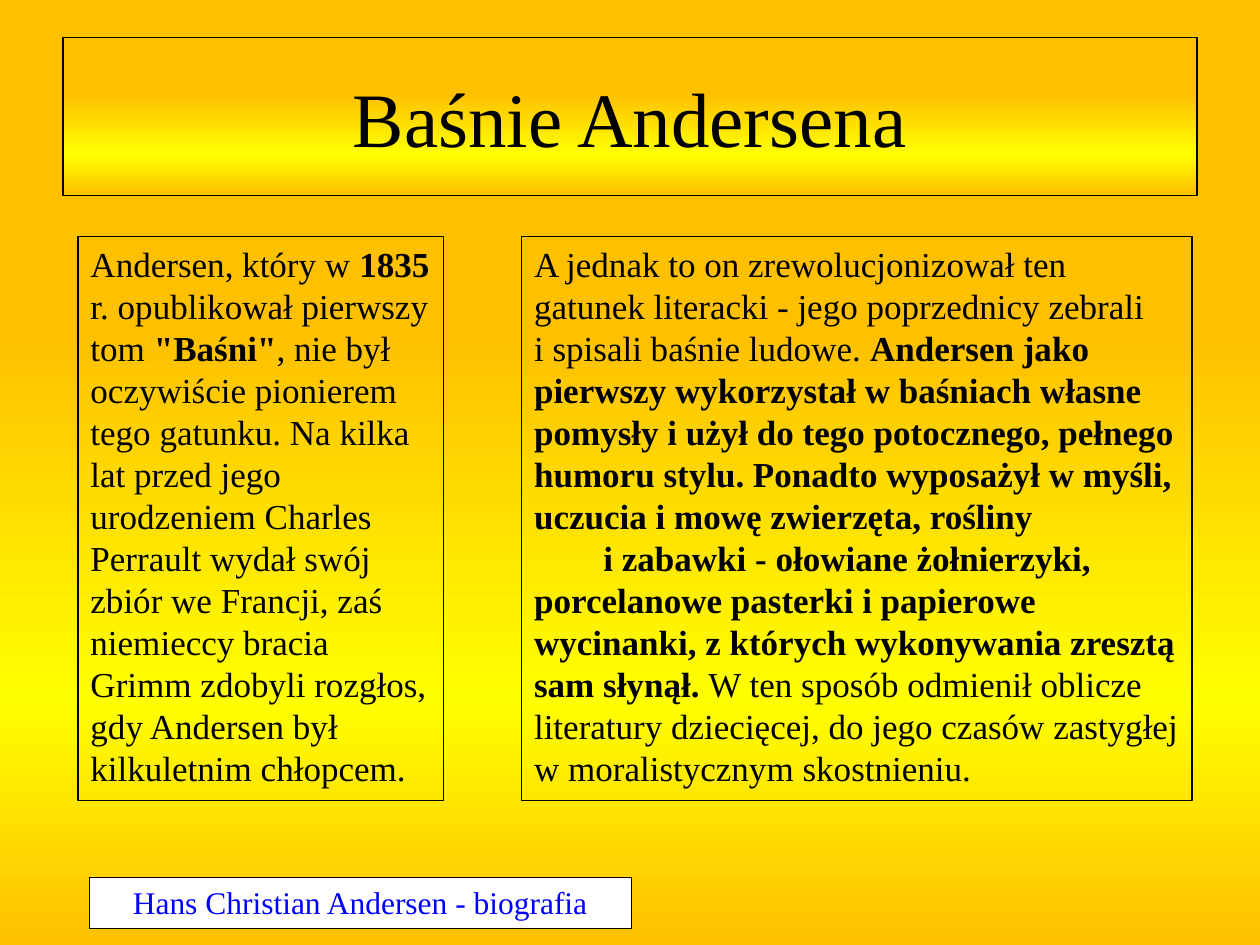
from copy import deepcopy
from dataclasses import dataclass

from lxml import etree
from pptx import Presentation
from pptx import util as u
from pptx.dml.color import RGBColor
from pptx.enum import text
from pptx.oxml import ns


@dataclass(frozen=True)
class Theme:
    font: str = "Times New Roman"
    ink: str = "000000"
    link: str = "0000FF"
    paper: str = "FFFFFF"
    gradient: tuple = ((0.35, "FFC000"), (0.74, "FFFF00"), (1, "FFC000"))
    title_size: int = 44
    body_size: int = 20
    link_size: int = 18


THEME = Theme()
WIDTH, HEIGHT = u.Inches(10), u.Inches(7.5)

# Boxes as shares of the slide: left, top, width, height
TITLE_BOX = (0.05, 0.04, 0.9, 0.167)
LEFT_BOX = (0.062, 0.25, 0.29, 0.597)
RIGHT_BOX = (0.414, 0.25, 0.532, 0.597)
LINK_BOX = (0.071, 0.928, 0.43, 0.054)

# Runs as (wording, bold); "\n" is a line break
LEFT_RUNS = (
    ("Andersen, który w ", False),
    ("1835", True),
    (" r. opublikował pierwszy tom ", False),
    ('"Baśni"', True),
    (", nie był oczywiście pionierem tego gatunku. Na kilka lat przed jego "
     "urodzeniem Charles Perrault wydał swój zbiór we Francji, zaś niemieccy "
     "bracia Grimm zdobyli rozgłos, gdy Andersen był kilkuletnim chłopcem.", False),
)
RIGHT_RUNS = (
    ("A jednak to on zrewolucjonizował ten gatunek literacki - jego poprzednicy "
     "zebrali\ni spisali baśnie ludowe. ", False),
    ("Andersen jako pierwszy wykorzystał w baśniach własne pomysły i użył do tego "
     "potocznego, pełnego humoru stylu. Ponadto wyposażył w myśli, uczucia i mowę "
     "zwierzęta, rośliny\n\ti zabawki - ołowiane żołnierzyki, porcelanowe pasterki "
     "i papierowe wycinanki, z których wykonywania zresztą sam słynął. ", True),
    ("W ten sposób odmienił oblicze literatury dziecięcej, do jego czasów "
     "zastygłej w moralistycznym skostnieniu.", False),
)


def place(shape, box):
    left, top, width, height = box
    shape.left, shape.width = int(left * WIDTH), int(width * WIDTH)
    shape.top, shape.height = int(top * HEIGHT), int(height * HEIGHT)


def outline(shape, points=0.75):
    shape.line.color.rgb = RGBColor.from_string(THEME.ink)
    shape.line.width = u.Pt(points)


def style_font(paragraph, size, color):
    paragraph.font.name = THEME.font
    paragraph.font.size = u.Pt(size)
    paragraph.font.color.rgb = RGBColor.from_string(color)


def fill_gradient(fill, element):
    """Runs the theme's gradient from top to bottom; element holds the fill."""
    fill.gradient()
    fill.gradient_angle = 270
    stops = element.find(f".//{ns.qn('a:gsLst')}")
    while len(stops) < len(THEME.gradient):
        stops.append(deepcopy(stops[-1]))
    for stop, (position, color) in zip(fill.gradient_stops, THEME.gradient):
        stop.position = position
        stop.color.rgb = RGBColor.from_string(color)


def add_tab_stop(paragraph, position):
    properties = paragraph._p.get_or_add_pPr()
    tabs = etree.SubElement(properties, ns.qn("a:tabLst"))
    etree.SubElement(tabs, ns.qn("a:tab"), pos=str(position), algn="l")


def add_box(slide, box):
    shape = slide.shapes.add_textbox(0, 0, 0, 0)
    place(shape, box)
    shape.text_frame.word_wrap = True
    return shape


def add_title(slide, box):
    title = slide.shapes.title
    place(title, box)
    fill_gradient(title.fill, title.element)
    outline(title)
    frame = title.text_frame
    frame.text = "Baśnie Andersena"
    frame.vertical_anchor = text.MSO_ANCHOR.MIDDLE
    paragraph = frame.paragraphs[0]
    paragraph.alignment = text.PP_ALIGN.CENTER
    style_font(paragraph, THEME.title_size, THEME.ink)


def add_story(slide, box, runs):
    shape = add_box(slide, box)
    outline(shape)
    paragraph = shape.text_frame.paragraphs[0]
    add_tab_stop(paragraph, u.Inches(0.55))
    style_font(paragraph, THEME.body_size, THEME.ink)
    for wording, bold in runs:
        for index, line in enumerate(wording.split("\n")):
            if index:
                paragraph.add_line_break()
            run = paragraph.add_run()
            run.text = line
            run.font.bold = bold


def add_biography_label(slide, box):
    shape = add_box(slide, box)
    shape.fill.solid()
    shape.fill.fore_color.rgb = RGBColor.from_string(THEME.paper)
    outline(shape, 0.25)
    paragraph = shape.text_frame.paragraphs[0]
    paragraph.text = "Hans Christian Andersen - biografia"
    paragraph.alignment = text.PP_ALIGN.CENTER
    style_font(paragraph, THEME.link_size, THEME.link)


def main():
    presentation = Presentation()
    presentation.slide_width, presentation.slide_height = WIDTH, HEIGHT
    slide = presentation.slides.add_slide(
        presentation.slide_layouts.get_by_name("Title Only"))
    fill_gradient(slide.background.fill, slide.element)
    add_title(slide, TITLE_BOX)
    add_story(slide, LEFT_BOX, LEFT_RUNS)
    add_story(slide, RIGHT_BOX, RIGHT_RUNS)
    add_biography_label(slide, LINK_BOX)
    presentation.save("out.pptx")


if __name__ == "__main__":
    main()
